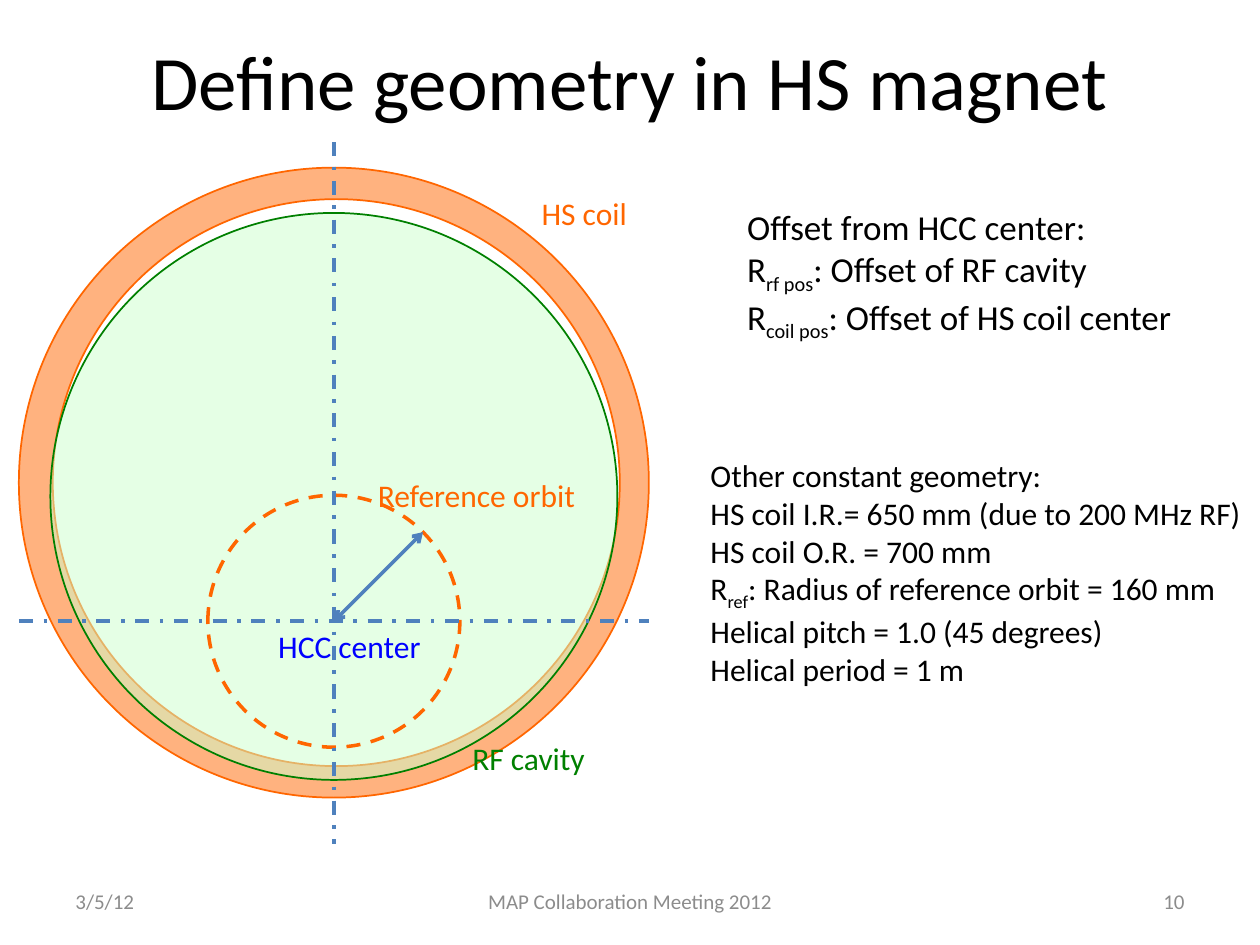
from math import cos, pi
from pptx import Presentation
from pptx.dml.color import RGBColor
from pptx.enum.dml import MSO_LINE
from pptx.enum.shapes import MSO_CONNECTOR, MSO_SHAPE
from pptx.enum.text import MSO_ANCHOR, PP_ALIGN
from pptx.oxml.ns import qn
from pptx.util import Pt
from lxml.etree import SubElement

COLORS = {"black": "000000", "gray": "8C8C8C", "orange": "FF6600",
          "white": "FFFFFF", "mint": "CCFFCC", "green": "008000",
          "blue": "0000FF", "axis": "4F81BD"}
LEFT, CENTER, RIGHT = PP_ALIGN.LEFT, PP_ALIGN.CENTER, PP_ALIGN.RIGHT
TOP, MIDDLE = MSO_ANCHOR.TOP, MSO_ANCHOR.MIDDLE

# Helical channel centre and reference orbit radius
CX, CY, ORBIT_R = 190.8, 355, 72
REACH = ORBIT_R * cos(pi / 4)

# Circles: centre x, centre y, radius, fill, opacity %, line, width, dash
COIL = [
    (CX, 275.8, 180, "orange", 50, "orange", 1, None),
    (192.2, 275.8, 162, "white", 100, "orange", 1, None),
    (CX, 283.7, 162, "mint", 50, "green", 1, None),
]
ORBIT = [(CX, CY, ORBIT_R, None, 100, "orange", 2, MSO_LINE.DASH)]

# Lines: x1, y1, x2, y2, dash, arrowheads
LINES = [
    (CX, 81.2, CX, 482.4, MSO_LINE.DASH_DOT, False),
    (CX - 180, CY, CX + 180, CY, MSO_LINE.DASH_DOT, False),
    (CX, CY, CX + REACH, CY - REACH, None, True),
]

# Texts: left, top, width, height, size, colour, align, anchor, wrap, paragraphs
# A paragraph is a tuple of runs; every second run is a subscript.
HEADINGS = [
    (36, 0.7, 648, 90, 44, "black", CENTER, MIDDLE, True,
     [("Define geometry in HS magnet",)]),
    (36, 500.5, 168, 28.8, 12, "gray", LEFT, MIDDLE, True, [("3/5/12",)]),
    (246, 500.5, 228, 28.8, 12, "gray", CENTER, MIDDLE, True,
     [("MAP Collaboration Meeting 2012",)]),
    (516, 500.5, 168, 28.8, 12, "gray", RIGHT, MIDDLE, True, [("10",)]),
]
NOTES = [
    (419.8, 113.8, 264, 80, 20, "black", LEFT, TOP, False, [
        ("Offset from HCC center:",),
        ("R", "rf pos", ": Offset of RF cavity"),
        ("R", "coil pos", ": Offset of HS coil center")]),
    (208.8, 268.6, 129, 29, 18, "orange", LEFT, TOP, False,
     [("Reference orbit",)]),
    (151.9, 355, 96.5, 29, 18, "blue", LEFT, TOP, False, [("HCC center",)]),
    (262.8, 419, 79, 29, 18, "green", LEFT, TOP, False, [("RF cavity",)]),
    (302.4, 107.3, 64, 29, 18, "orange", LEFT, TOP, False, [("HS coil",)]),
    (398.9, 257, 320.4, 138.2, 18, "black", LEFT, TOP, False, [
        ("Other constant geometry:",),
        ("HS coil I.R.= 650 mm (due to 200 MHz RF)",),
        ("HS coil O.R. = 700 mm",),
        ("R", "ref", ": Radius of reference orbit = 160 mm"),
        ("Helical pitch = 1.0 (45 degrees)",),
        ("Helical period = 1 m",)]),
]


def rgb(name):
    return RGBColor.from_string(COLORS[name])


def set_line(line, color, width, dash):
    line.color.rgb = rgb(color)
    line.width = Pt(width)
    if dash:
        line.dash_style = dash


def add_circle(s, x, y, radius, fill, opacity, line, width, dash):
    sp = s.shapes.add_shape(MSO_SHAPE.OVAL, Pt(x - radius), Pt(y - radius),
                            Pt(2 * radius), Pt(2 * radius))
    sp.shadow.inherit = False
    set_line(sp.line, line, width, dash)
    if not fill:
        sp.fill.background()
        return
    sp.fill.solid()
    sp.fill.fore_color.rgb = rgb(fill)
    if opacity < 100:
        clr = sp._element.spPr.find(qn("a:solidFill"))[0]
        SubElement(clr, qn("a:alpha"), val=str(opacity * 1000))


def add_line(s, x1, y1, x2, y2, dash, arrows):
    c = s.shapes.add_connector(MSO_CONNECTOR.STRAIGHT,
                               Pt(x1), Pt(y1), Pt(x2), Pt(y2))
    set_line(c.line, "axis", 2, dash)
    if arrows:
        for end in ("a:headEnd", "a:tailEnd"):
            SubElement(c.line._get_or_add_ln(), qn(end), type="arrow")
    SubElement(c._element.spPr, qn("a:effectLst"))


def add_text(s, x, y, w, h, size, color, align, anchor, wrap, paragraphs):
    tf = s.shapes.add_textbox(Pt(x), Pt(y), Pt(w), Pt(h)).text_frame
    tf.word_wrap, tf.vertical_anchor = wrap, anchor
    for i, runs in enumerate(paragraphs):
        p = tf.add_paragraph() if i else tf.paragraphs[0]
        p.alignment = align
        for j, text in enumerate(runs):
            r = p.add_run()
            r.text = text
            for key, value in {"name": "Calibri", "size": Pt(size)}.items():
                setattr(r.font, key, value)
            r.font.color.rgb = rgb(color)
            if j % 2:
                r.font._element.set("baseline", "-25000")


prs = Presentation()
prs.slide_width, prs.slide_height = Pt(720), Pt(540)
s = prs.slides.add_slide(prs.slide_layouts[6])

# Back to front: coil and cavity, title and footer, orbit, axes, notes
for add, items in [(add_circle, COIL), (add_text, HEADINGS),
                   (add_circle, ORBIT), (add_line, LINES), (add_text, NOTES)]:
    for item in items:
        add(s, *item)

prs.save("out.pptx")
